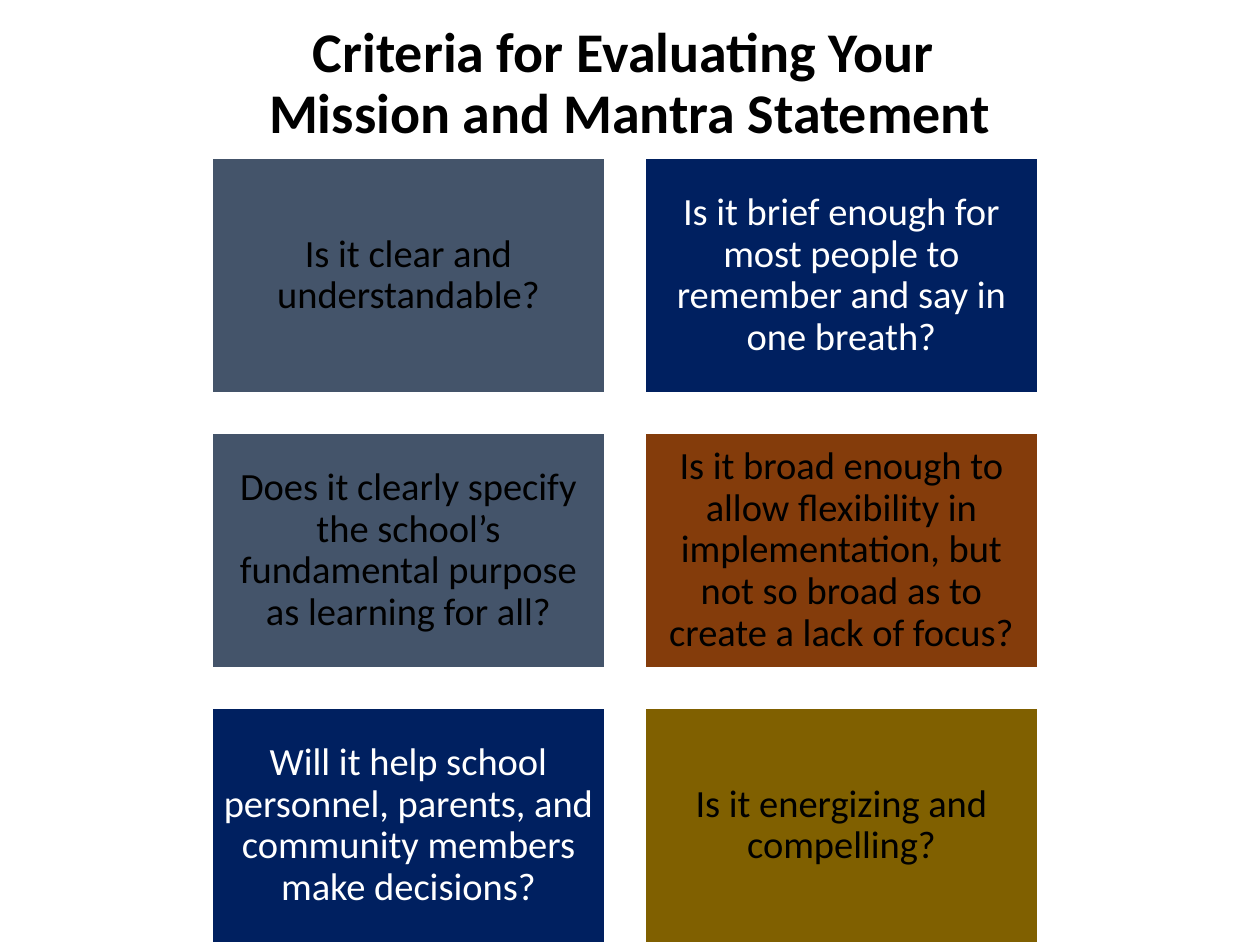
import dataclasses

import pptx
import pptx.dml.color
import pptx.enum.shapes
import pptx.enum.text
import pptx.util

EMU_PER_PX = 914400 // 126


@dataclasses.dataclass(frozen=True)
class Theme:
    font: str = "Calibri"
    title_size: int = 32
    card_size: int = 22
    line_spacing: float = 0.9
    outline_width: float = 1.5
    black: str = "000000"
    white: str = "FFFFFF"
    slate: str = "44546A"
    navy: str = "002060"
    rust: str = "843C0B"
    olive: str = "806000"


THEME = Theme()

# Criteria in reading order: question, fill colour, text colour
CRITERIA = [
    ("Is it clear and understandable?", THEME.slate, THEME.black),
    ("Is it brief enough for most people to remember and say in one breath?",
     THEME.navy, THEME.white),
    ("Does it clearly specify the school’s fundamental purpose as learning for all?",
     THEME.slate, THEME.black),
    ("Is it broad enough to allow flexibility in implementation, "
     "but not so broad as to create a lack of focus?",
     THEME.rust, THEME.black),
    ("Will it help school personnel, parents, and community members make decisions?",
     THEME.navy, THEME.white),
    ("Is it energizing and compelling?", THEME.olive, THEME.black),
]

# Card grid, in px
COLUMNS = 2
GRID_LEFT, GRID_TOP = 212, 158
CARD_WIDTH, CARD_HEIGHT = 393, 235
GAP = 40


def px(length):
    return pptx.util.Emu(length * EMU_PER_PX)


def rgb(color):
    return pptx.dml.color.RGBColor.from_string(color)


def write_text(shape, text, *, size, color, bold=False, inset=11):
    frame = shape.text_frame
    frame.word_wrap = True
    frame.vertical_anchor = pptx.enum.text.MSO_ANCHOR.MIDDLE
    frame.margin_left = frame.margin_right = px(inset)
    frame.margin_top = frame.margin_bottom = px(inset)
    paragraph = frame.paragraphs[0]
    paragraph.text = text
    paragraph.alignment = pptx.enum.text.PP_ALIGN.CENTER
    paragraph.line_spacing = THEME.line_spacing
    for run in paragraph.runs:
        run.font.name = THEME.font
        run.font.size = pptx.util.Pt(size)
        run.font.bold = bold
        run.font.color.rgb = rgb(color)


def add_title(slide, text):
    box = slide.shapes.add_textbox(px(63), px(1), px(1134), px(168))
    write_text(box, text, size=THEME.title_size, color=THEME.black, bold=True)


def add_card(slide, left, top, text, fill, color):
    card = slide.shapes.add_shape(
        pptx.enum.shapes.MSO_SHAPE.RECTANGLE,
        px(left), px(top), px(CARD_WIDTH), px(CARD_HEIGHT))
    card.shadow.inherit = False
    card.fill.solid()
    card.fill.fore_color.rgb = rgb(fill)
    card.line.color.rgb = rgb(THEME.white)
    card.line.width = pptx.util.Pt(THEME.outline_width)
    write_text(card, text, size=THEME.card_size, color=color)


def main():
    presentation = pptx.Presentation()
    presentation.slide_width = px(1260)
    presentation.slide_height = px(945)
    slide = presentation.slides.add_slide(presentation.slide_layouts[6])

    # Title on two lines
    add_title(slide, "Criteria for Evaluating Your \vMission and Mantra Statement")

    # Grid of criteria
    for index, (text, fill, color) in enumerate(CRITERIA):
        row, column = divmod(index, COLUMNS)
        add_card(slide,
                 GRID_LEFT + column * (CARD_WIDTH + GAP),
                 GRID_TOP + row * (CARD_HEIGHT + GAP),
                 text, fill, color)

    presentation.save("out.pptx")


if __name__ == "__main__":
    main()
